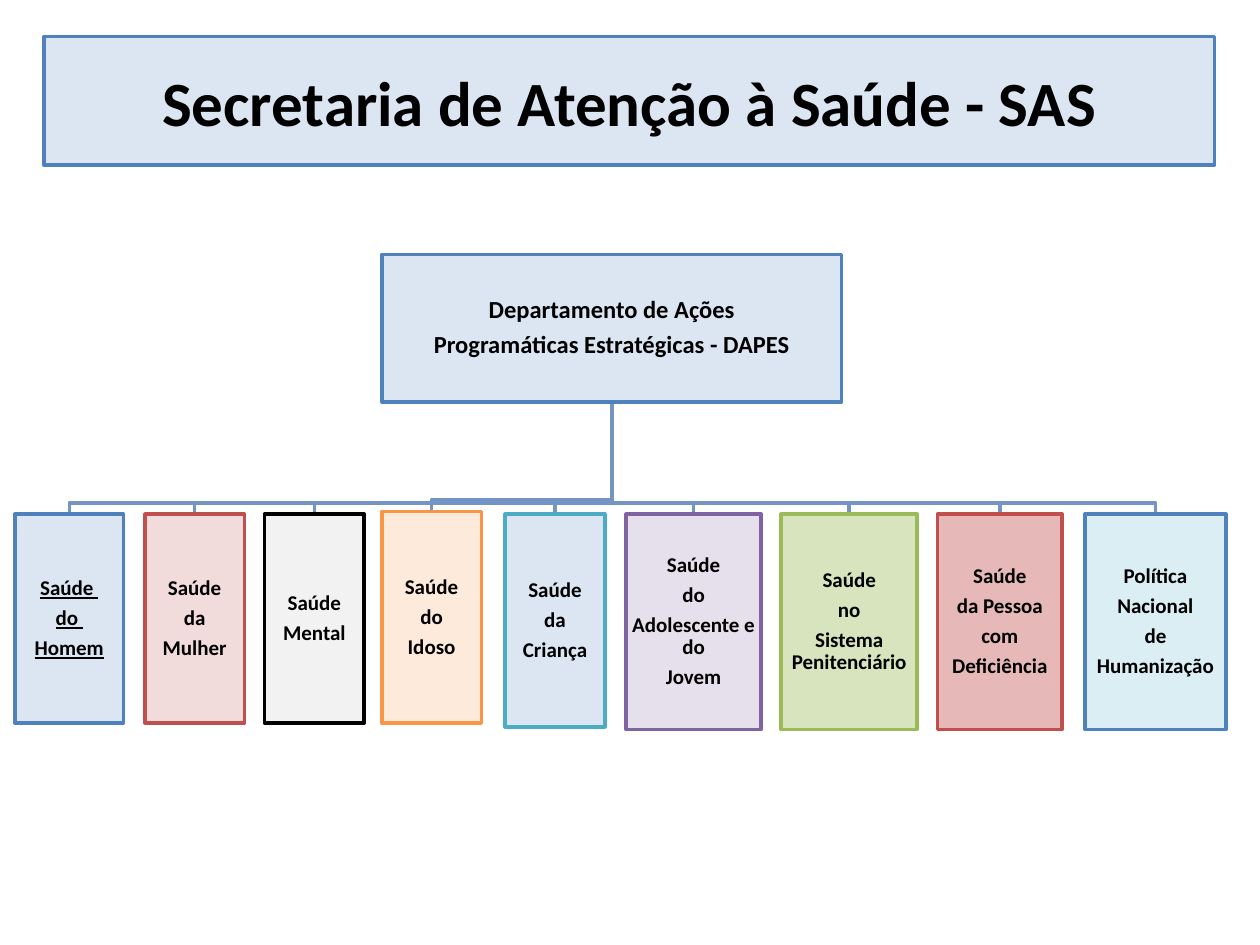
"""Build the organisation chart of the Secretaria de Atenção à Saúde."""
from pptx import Presentation
from pptx import util as u
from pptx.dml.color import RGBColor
from pptx.enum import shapes, text

BLACK = RGBColor(0x00, 0x00, 0x00)
BLUE = RGBColor(0x4F, 0x81, 0xBD)
PALE = RGBColor(0xDC, 0xE6, 0xF2)
WIRE = RGBColor(0x73, 0x94, 0xC5)
RED = RGBColor(0xC0, 0x50, 0x4D)
PINK = RGBColor(0xF2, 0xDC, 0xDB)
ROSE = RGBColor(0xE6, 0xB9, 0xB8)
GREY = RGBColor(0xF2, 0xF2, 0xF2)
GOLD = RGBColor(0xF7, 0x96, 0x46)
PEACH = RGBColor(0xFD, 0xEA, 0xDA)
TEAL = RGBColor(0x4B, 0xAC, 0xC6)
AQUA = RGBColor(0xDB, 0xEE, 0xF4)
PLUM = RGBColor(0x80, 0x64, 0xA2)
LILAC = RGBColor(0xE6, 0xE0, 0xEC)
GREEN = RGBColor(0x9B, 0xBB, 0x59)
LIME = RGBColor(0xD7, 0xE4, 0xBD)

deck = Presentation()
deck.slide_width, deck.slide_height = u.Inches(10), u.Inches(7.5)
col, row = deck.slide_width / 100, deck.slide_height / 75
slide = deck.slides.add_slide(deck.slide_layouts[6])


def add_box(lines, left, top, wide, high, fill=PALE, edge=BLUE,
            size=12, line=0.9, gap=0.35, inset=0.1, under=False):
    box = slide.shapes.add_shape(
        shapes.MSO_SHAPE.RECTANGLE, int(left * col), int(top * row),
        int(wide * col), int(high * row))
    box.shadow.inherit = False
    box.fill.solid()
    box.fill.fore_color.rgb = fill
    box.line.color.rgb = edge
    box.line.width = u.Pt(2)
    frame = box.text_frame
    frame.word_wrap = True
    frame.vertical_anchor = text.MSO_ANCHOR.MIDDLE
    frame.margin_left = frame.margin_right = int(inset * col)
    frame.margin_top = frame.margin_bottom = int(inset * row)
    frame.text = "\n".join(lines)
    for para in frame.paragraphs:
        para.alignment = text.PP_ALIGN.CENTER
        para.line_spacing = line
        para.space_after = u.Pt(size * gap)
        for run in para.runs:
            run.font.name = "Calibri"
            run.font.size = u.Pt(size)
            run.font.bold = True
            run.font.underline = under
            run.font.color.rgb = BLACK


areas = [
    (["Saúde ", "do ", "Homem"], 1.2, 8.6, 16.6, PALE, BLUE),
    (["Saúde", "da", "Mulher"], 11.5, 7.9, 16.6, PINK, RED),
    (["Saúde", "Mental"], 21, 7.9, 16.6, GREY, BLACK),
    (["Saúde", "do", "Idoso"], 30.3, 7.9, 16.8, PEACH, GOLD),
    (["Saúde", "da", "Criança"], 40.1, 7.9, 16.9, PALE, TEAL),
    (["Saúde", "do", "Adolescente e do", "Jovem"],
     49.7, 10.7, 17.1, LILAC, PLUM),
    (["Saúde", "no", "Sistema Penitenciário"],
     62, 10.8, 17.1, LIME, GREEN),
    (["Saúde", "da Pessoa", "com", "Deficiência"],
     74.4, 9.9, 17.1, ROSE, RED),
    (["Política", "Nacional", "de", "Humanização"],
     86.1, 11.2, 17.1, AQUA, BLUE),
]
root, base = 48.55, 31.9

add_box(["Secretaria de Atenção à Saúde - SAS"], 3.5, 2.9, 92.9, 10.2,
        size=36, line=1, gap=0, inset=0.5)

tops = [40.6 if "Idoso" in area[0] else 40.8 for area in areas]
for (lines, left, wide, *rest), top in zip(areas, tops):
    mid, bend = left + wide / 2, top - 0.9
    spots = [(root, base), (root, bend), (mid, bend), (mid, top)]
    first, *others = [(int(x * col), int(y * row)) for x, y in spots]
    pen = slide.shapes.build_freeform(*first)
    pen.add_line_segments(others, close=False)
    wire = pen.convert_to_shape()
    wire.shadow.inherit = False
    wire.fill.background()
    wire.line.color.rgb = WIRE
    wire.line.width = u.Pt(2)

add_box(["Departamento de Ações", "Programáticas Estratégicas - DAPES"],
        30.3, 20.2, 36.5, 11.7, size=14)

for (lines, left, wide, high, fill, edge), top in zip(areas, tops):
    add_box(lines, left, top, wide, high, fill=fill, edge=edge,
            under="Homem" in lines)

deck.save("out.pptx")
